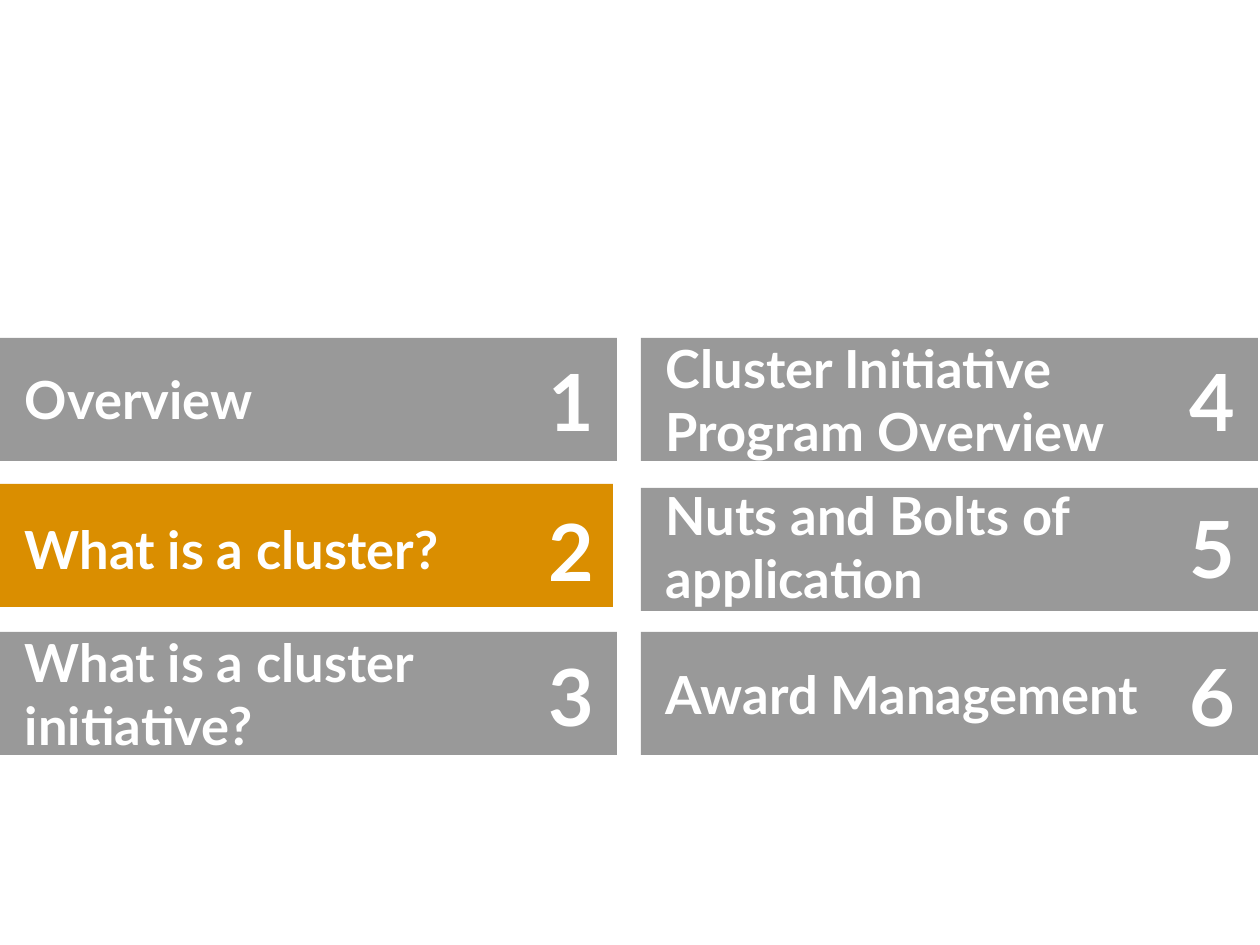
import lxml.etree
import pptx
import pptx.util
import pptx.dml.color
import pptx.enum.shapes
import pptx.enum.text
import pptx.oxml.ns

EMU_PER_PX = 914400 / 126

WHITE = pptx.dml.color.RGBColor(0xFF, 0xFF, 0xFF)
CHARCOAL = pptx.dml.color.RGBColor(0x34, 0x34, 0x34)
ORANGE = pptx.dml.color.RGBColor(0xDA, 0x8E, 0x00)

PANEL_SIZE = (617, 123)
LABEL_SIZE = (517, 71)
NUMBER_SIZE = (47, 96)
COLUMN_LEFTS = (0, 641)
LABEL_INDENT = 25
NUMBER_INDENT = 547
NUMBER_RISE = 11  # number box starts this far above its label box

# Column, panel top, label top, wording; numbered in this order
AGENDA = [
    (0, 338, 363, "Overview"),
    (0, 484, 513, "What is a cluster?"),
    (0, 632, 658, "What is a cluster initiative?"),
    (1, 338, 363, "Cluster Initiative Program Overview"),
    (1, 488, 510, "Nuts and Bolts of application"),
    (1, 632, 658, "Award Management"),
]
CURRENT = 2
CURRENT_SHIFT = -4

LABEL_FONT = {"name": "Lato", "size": pptx.util.Pt(30), "bold": True}
NUMBER_FONT = {**LABEL_FONT, "size": pptx.util.Pt(45)}


def px(length):
    return pptx.util.Emu(round(length * EMU_PER_PX))


def add_panel(slide, left, top, color, opacity=100):
    shape = slide.shapes.add_shape(
        pptx.enum.shapes.MSO_SHAPE.RECTANGLE,
        px(left), px(top), *map(px, PANEL_SIZE))
    shape.shadow.inherit = False
    shape.line.fill.background()
    shape.fill.solid()
    shape.fill.fore_color.rgb = color
    if opacity < 100:
        color_element = shape.element.find(
            ".//" + pptx.oxml.ns.qn("a:srgbClr"))
        lxml.etree.SubElement(color_element, pptx.oxml.ns.qn("a:alpha"),
                              val=str(opacity * 1000))


def add_text(slide, left, top, size, text, font, alignment, wrap):
    box = slide.shapes.add_textbox(px(left), px(top), *map(px, size))
    frame_format = {
        "margin_left": 0, "margin_top": 0,
        "margin_right": 0, "margin_bottom": 0,
        "vertical_anchor": pptx.enum.text.MSO_ANCHOR.MIDDLE,
        "word_wrap": wrap,
    }
    for name, value in frame_format.items():
        setattr(box.text_frame, name, value)
    paragraph = box.text_frame.paragraphs[0]
    paragraph.alignment = alignment
    run = paragraph.add_run()
    run.text = text
    for name, value in font.items():
        setattr(run.font, name, value)
    run.font.color.rgb = WHITE


def add_agenda_item(slide, number, column, panel_top, label_top, wording):
    left = COLUMN_LEFTS[column]
    if number == CURRENT:
        add_panel(slide, left + CURRENT_SHIFT, panel_top, ORANGE)
    else:
        add_panel(slide, left, panel_top, CHARCOAL, opacity=50)
    align = pptx.enum.text.PP_ALIGN
    add_text(slide, left + LABEL_INDENT, label_top, LABEL_SIZE,
             wording, LABEL_FONT, align.LEFT, True)
    add_text(slide, left + NUMBER_INDENT, label_top - NUMBER_RISE, NUMBER_SIZE,
             str(number), NUMBER_FONT, align.RIGHT, False)


def main():
    presentation = pptx.Presentation()
    presentation.slide_width = px(1260)
    presentation.slide_height = px(945)
    slide = presentation.slides.add_slide(presentation.slide_layouts[6])
    for number, item in enumerate(AGENDA, start=1):
        add_agenda_item(slide, number, *item)
    presentation.save("out.pptx")


if __name__ == "__main__":
    main()
